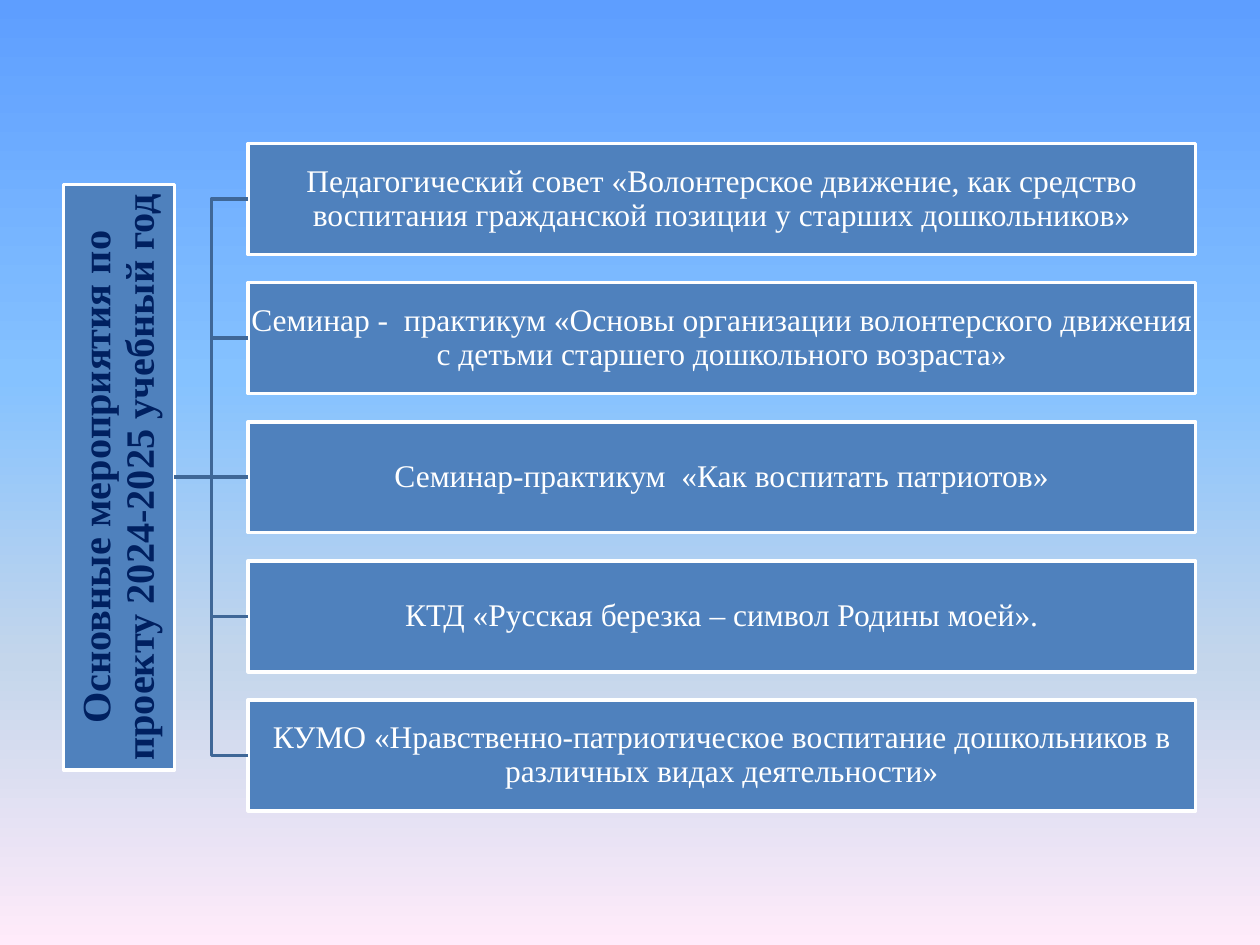
from copy import deepcopy
from dataclasses import dataclass

from pptx import Presentation
from pptx.dml.color import RGBColor
from pptx.enum.shapes import MSO_CONNECTOR, MSO_SHAPE
from pptx.enum.text import MSO_ANCHOR, PP_ALIGN
from pptx.oxml.ns import qn
from pptx.shapes.autoshape import Shape
from pptx.slide import Slide
from pptx.util import Pt

BLUE = RGBColor(0x4F, 0x81, 0xBD)
STEEL = RGBColor(0x3F, 0x67, 0x97)
NAVY = RGBColor(0x00, 0x20, 0x60)
WHITE = RGBColor(0xFF, 0xFF, 0xFF)
SKY = [
    (0, RGBColor(0x5E, 0x9E, 0xFF)),
    (0.4, RGBColor(0x85, 0xC2, 0xFF)),
    (0.7, RGBColor(0xC4, 0xD6, 0xEB)),
    (1, RGBColor(0xFF, 0xEB, 0xFA)),
]

FONT = "Times New Roman"
LINE_WIDTH = 2
BOX_DEPTH = 63.4
PROGRAMME_LEFT, PROGRAMME_HEIGHT = 36.3, 334.8
EVENT_LEFT, EVENT_TOP, EVENT_WIDTH, EVENT_PITCH = 141.8, 82, 541.4, 79.5

PROGRAMME_FONT = {"name": FONT, "size": Pt(23), "bold": True}
EVENT_FONT = {"name": FONT, "size": Pt(18), "bold": False}
PARAGRAPH_FORMAT = {"alignment": PP_ALIGN.CENTER, "line_spacing": 0.9}

PROGRAMME = "Основные мероприятия по проекту 2024-2025 учебный год"
EVENTS = [
    "Педагогический совет «Волонтерское движение, как средство "
    "воспитания гражданской позиции у старших дошкольников»",
    "Семинар -  практикум «Основы организации волонтерского движения "
    "с детьми старшего дошкольного возраста»",
    "Семинар-практикум  «Как воспитать патриотов»",
    "КТД «Русская березка – символ Родины моей».",
    "КУМО «Нравственно-патриотическое воспитание дошкольников "
    "в различных видах деятельности»",
]


@dataclass
class Box:
    text: str
    left: float
    top: float
    width: float
    height: float
    inset: float
    font: dict
    color: RGBColor


def apply_format(target: object, values: dict) -> None:
    for attribute, value in values.items():
        setattr(target, attribute, value)


def paint_background(slide: Slide) -> None:
    fill = slide.background.fill
    fill.gradient()
    fill.gradient_angle = 270
    stop_list = slide.element.find(f".//{qn('a:gsLst')}")
    for _ in range(len(SKY) - len(stop_list)):
        stop_list.append(deepcopy(stop_list[0]))
    for stop, (position, color) in zip(fill.gradient_stops, SKY):
        stop.position = position
        stop.color.rgb = color


def draw_box(slide: Slide, box: Box) -> Shape:
    bounds = map(Pt, (box.left, box.top, box.width, box.height))
    shape = slide.shapes.add_shape(MSO_SHAPE.RECTANGLE, *bounds)
    shape.shadow.inherit = False
    shape.fill.solid()
    shape.fill.fore_color.rgb = BLUE
    shape.line.color.rgb = WHITE
    shape.line.width = Pt(LINE_WIDTH)
    frame = shape.text_frame
    margins = {f"margin_{side}": Pt(box.inset) for side in ("left", "top", "right", "bottom")}
    apply_format(frame, {"word_wrap": True, "vertical_anchor": MSO_ANCHOR.MIDDLE, **margins})
    paragraph = frame.paragraphs[0]
    apply_format(paragraph, PARAGRAPH_FORMAT)
    run = paragraph.add_run()
    run.text = box.text
    apply_format(run.font, box.font)
    run.font.color.rgb = box.color
    return shape


def join(slide: Slide, programme: Shape, event: Shape, kind: MSO_CONNECTOR) -> None:
    branch = slide.shapes.add_connector(kind, 0, 0, 0, 0)
    branch.begin_connect(programme, 3)
    branch.end_connect(event, 1)
    branch.line.color.rgb = STEEL
    branch.line.width = Pt(LINE_WIDTH)
    properties = branch.element.spPr
    properties.append(properties.makeelement(qn("a:effectLst"), {}))


def main() -> None:
    presentation = Presentation()
    presentation.slide_width, presentation.slide_height = Pt(720), Pt(540)
    slide = presentation.slides.add_slide(presentation.slide_layouts[6])
    paint_background(slide)

    middle = len(EVENTS) // 2
    center = EVENT_TOP + middle * EVENT_PITCH + BOX_DEPTH / 2
    programme = draw_box(slide, Box(
        PROGRAMME, PROGRAMME_LEFT, center - PROGRAMME_HEIGHT / 2,
        BOX_DEPTH, PROGRAMME_HEIGHT, 1.2, PROGRAMME_FONT, NAVY))
    programme.text_frame._txBody.bodyPr.set("vert", "vert270")

    for index, text in enumerate(EVENTS):
        event = draw_box(slide, Box(
            text, EVENT_LEFT, EVENT_TOP + index * EVENT_PITCH,
            EVENT_WIDTH, BOX_DEPTH, 0.9, EVENT_FONT, WHITE))
        kind = MSO_CONNECTOR.STRAIGHT if index == middle else MSO_CONNECTOR.ELBOW
        join(slide, programme, event, kind)

    presentation.save("out.pptx")


if __name__ == "__main__":
    main()
